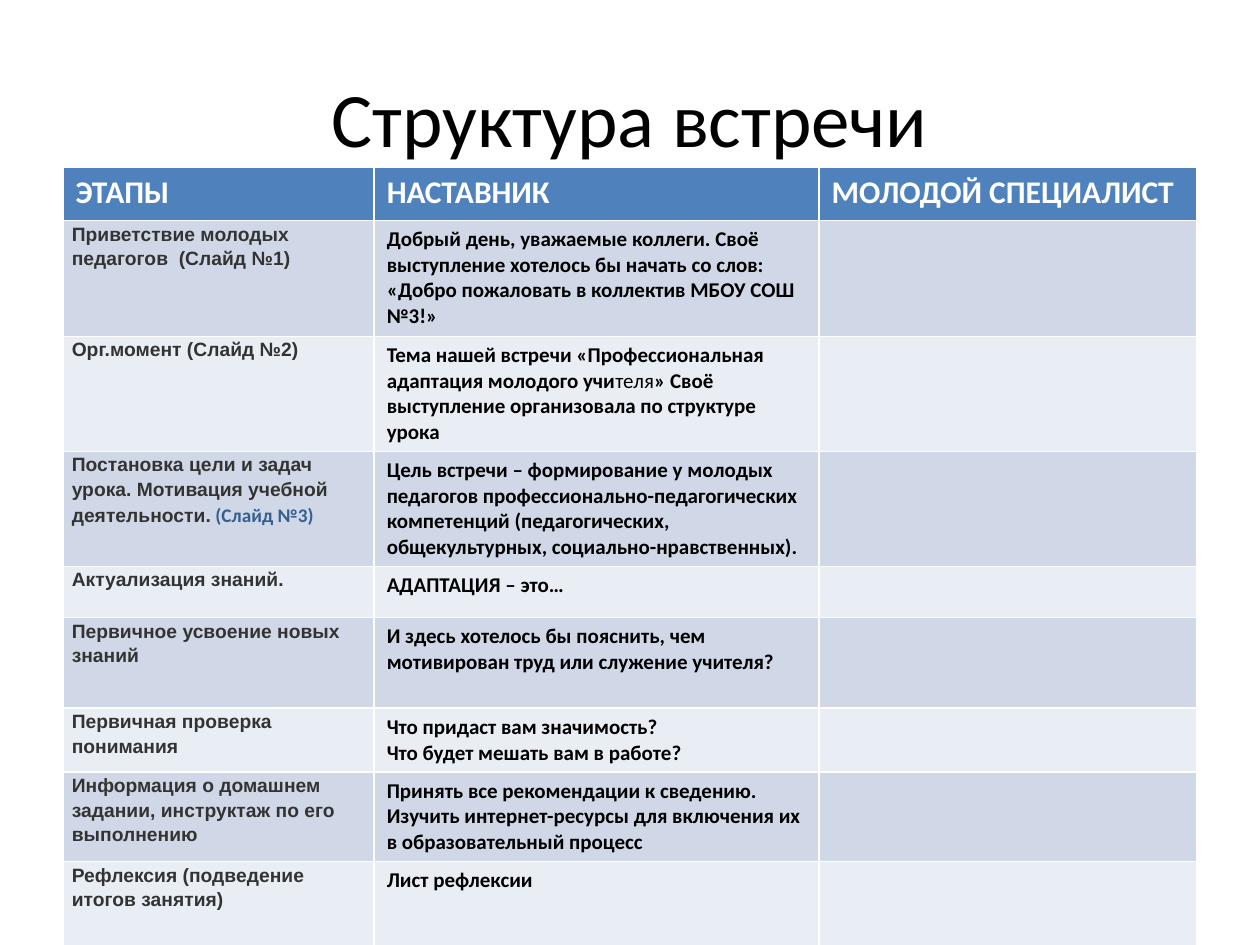
from pptx import Presentation
from pptx.dml.color import RGBColor
from pptx.enum.text import MSO_ANCHOR, PP_ALIGN
from pptx.util import Inches, Pt

BLACK = RGBColor(0x00, 0x00, 0x00)
WHITE = RGBColor(0xFF, 0xFF, 0xFF)
GREY = RGBColor(0x33, 0x33, 0x33)
NAVY = RGBColor(0x36, 0x5F, 0x91)
BLUE = RGBColor(0x4F, 0x81, 0xBD)
BANDS = RGBColor(0xD0, 0xD8, 0xE8), RGBColor(0xE9, 0xED, 0xF4)

COLS = 2.47, 3.53, 3
ROWS = 0.42, 0.92, 0.91, 0.91, 0.4, 0.72, 0.5, 0.71, 0.67
HEADS = "ЭТАПЫ", "НАСТАВНИК", "МОЛОДОЙ СПЕЦИАЛИСТ"
STEPS = [
    ("Приветствие молодых педагогов  (Слайд №1)",
     ["Добрый день, уважаемые коллеги. Своё выступление хотелось бы начать "
      "со слов: «Добро пожаловать в коллектив МБОУ СОШ №3!»"]),
    ("Орг.момент (Слайд №2)",
     [("Тема нашей встречи «Профессиональная адаптация молодого учи",
       "теля", "» Своё выступление организовала по структуре урока")]),
    (("Постановка цели и задач урока. Мотивация учебной деятельности.",
      " (Слайд №3)"),
     ["Цель встречи – формирование у молодых педагогов "
      "профессионально-педагогических компетенций (педагогических, "
      "общекультурных, социально-нравственных)."]),
    ("Актуализация знаний.", ["АДАПТАЦИЯ – это…"]),
    ("Первичное усвоение новых знаний",
     ["И здесь хотелось бы пояснить, чем мотивирован труд или служение "
      "учителя?"]),
    ("Первичная проверка понимания",
     ["Что придаст вам значимость?", "Что будет мешать вам в работе?"]),
    ("Информация о домашнем задании, инструктаж по его выполнению",
     ["Принять все рекомендации к сведению. Изучить интернет-ресурсы для "
      "включения их в образовательный процесс"]),
    ("Рефлексия (подведение итогов занятия)", ["Лист рефлексии"]),
]


def style(font, name, size, color, bold=True):
    font.name = name
    font.size = Pt(size)
    font.color.rgb = color
    font.bold = bold


def write(para, text, name, size, color):
    style(para.font, name, size, color)
    parts = (text,) if isinstance(text, str) else text
    for part in parts:
        para.add_run().text = part
    return para.runs


def fill(cell, color):
    cell.fill.solid()
    cell.fill.fore_color.rgb = color


def add_title(slide, left, top, width, height):
    title = slide.shapes.title
    title.left, title.top = Inches(left), Inches(top)
    title.width, title.height = Inches(width), Inches(height)
    frame = title.text_frame
    frame.text = "Структура встречи"
    frame.vertical_anchor = MSO_ANCHOR.MIDDLE
    para = frame.paragraphs[0]
    para.alignment = PP_ALIGN.CENTER
    style(para.font, "Calibri", 44, BLACK, False)


def add_stage(cell, text):
    cell.margin_left = cell.margin_right = Inches(0.07)
    cell.margin_top = cell.margin_bottom = 0
    para = cell.text_frame.paragraphs[0]
    para.line_spacing = 1.15
    para.space_before = Pt(24)
    runs = write(para, text, "Arial", 11, GREY)
    for run in runs[1:]:
        style(run.font, "Calibri", 11, NAVY)


def add_speech(cell, lines):
    frame = cell.text_frame
    for i, line in enumerate(lines):
        para = frame.add_paragraph() if i else frame.paragraphs[0]
        runs = write(para, line, "Calibri", 12, BLACK)
        for run in runs[1:2]:
            run.font.bold = False


def add_plan(slide, left, top, width):
    table = slide.shapes.add_table(
        len(ROWS), len(COLS), Inches(left), Inches(top),
        Inches(width), Inches(sum(ROWS))).table
    for col, size in zip(table.columns, COLS):
        col.width = Inches(size * width / sum(COLS))
    for row, size in zip(table.rows, ROWS):
        row.height = Inches(size)
    for i, head in enumerate(HEADS):
        cell = table.cell(0, i)
        fill(cell, BLUE)
        write(cell.text_frame.paragraphs[0], head, "Calibri", 18, WHITE)
    for i, (stage, speech) in enumerate(STEPS):
        cells = [table.cell(i + 1, j) for j in range(len(COLS))]
        for cell in cells:
            fill(cell, BANDS[i % 2])
        add_stage(cells[0], stage)
        add_speech(cells[1], speech)


def main():
    deck = Presentation()
    deck.slide_width, deck.slide_height = Inches(10), Inches(7.5)
    slide = deck.slides.add_slide(deck.slide_layouts[5])
    add_title(slide, 0.5, 0.3, 9, 1.25)
    add_plan(slide, 0.5, 1.33, 9)
    deck.save("out.pptx")


if __name__ == "__main__":
    main()
